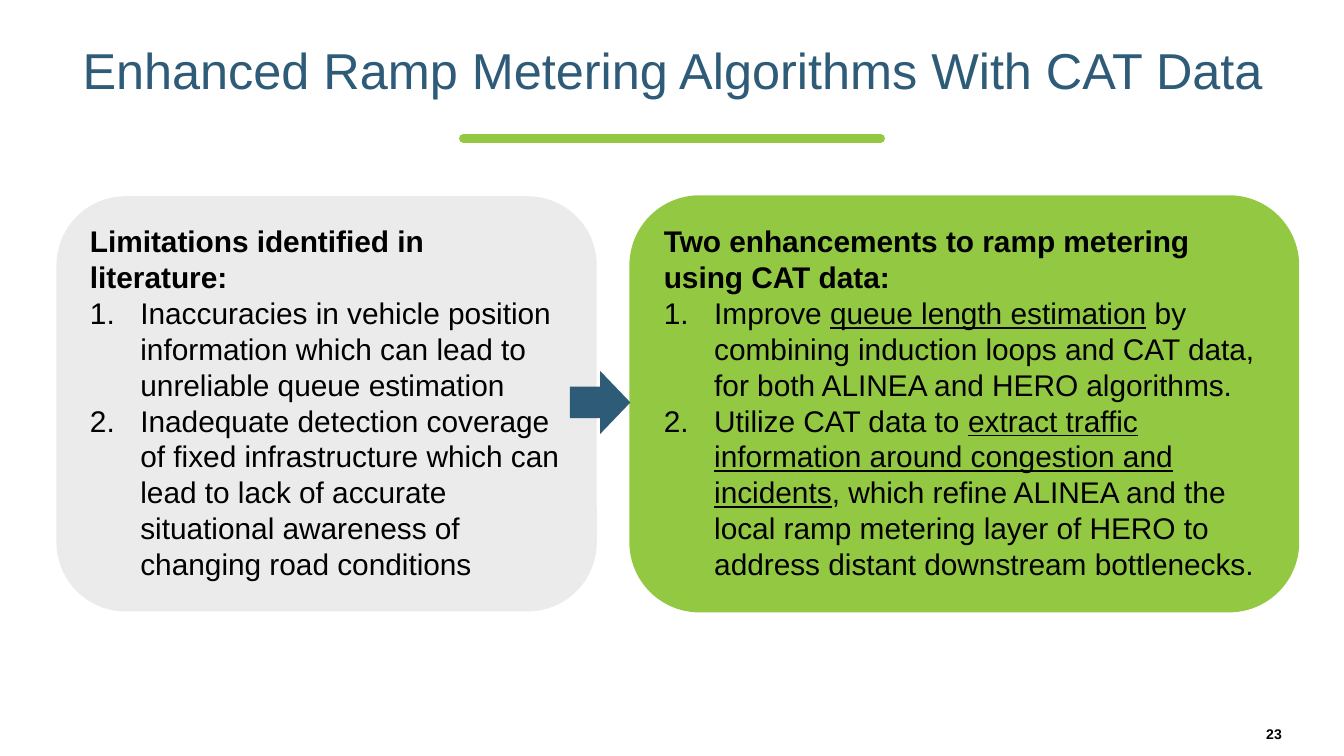
from lxml.etree import SubElement
from pptx import Presentation
from pptx.dml.color import RGBColor
from pptx.enum.shapes import MSO_CONNECTOR, MSO_SHAPE
from pptx.enum.text import MSO_ANCHOR, MSO_AUTO_SIZE, PP_ALIGN
from pptx.oxml.ns import qn
from pptx.util import Inches, Pt

BLUE, GREEN, GREY, BLACK = "2E5B78", "93C843", "EAEBEA", "000000"


def color(value):
    return RGBColor.from_string(value)


class SlideBuilder:
    """Holds the text style and the slide being built."""

    font_name = "Arial"
    list_indent = Inches(3 / 8)

    def __init__(self, page):
        self.page = page

    def span(self, para, text, ink=BLACK, **formats):
        span = para.add_run()
        span.text = text
        for name, value in {"name": self.font_name, **formats}.items():
            setattr(span.font, name, value)
        span.font.color.rgb = color(ink)

    def title(self, text, *bounds):
        box = self.page.shapes.title
        box.left, box.top, box.width, box.height = map(Inches, bounds)
        frame = box.text_frame
        frame.word_wrap = True
        frame.auto_size = MSO_AUTO_SIZE.NONE
        frame.vertical_anchor = MSO_ANCHOR.MIDDLE
        para = frame.paragraphs[0]
        para.alignment = PP_ALIGN.CENTER
        para.line_spacing = 0.9
        self.span(para, text, BLUE, size=Pt(27))

    def rule(self, start, end, y, width):
        line = self.page.shapes.add_connector(
            MSO_CONNECTOR.STRAIGHT, Inches(start), Inches(y), Inches(end), Inches(y))
        line.line.color.rgb = color(GREEN)
        line.line.width = Pt(width)
        line.line._get_or_add_ln().set("cap", "rnd")
        SubElement(line._element.spPr, qn("a:effectLst"))

    def shape(self, kind, fill, *bounds, outline=None):
        shape = self.page.shapes.add_shape(kind, *map(Inches, bounds))
        shape.shadow.inherit = False
        shape.fill.solid()
        shape.fill.fore_color.rgb = color(fill)
        if outline:
            shape.line.color.rgb = color(outline)
            shape.line.width = Pt(1)
        else:
            shape.line.fill.background()
        return shape

    def panel(self, heading, items, fill, *bounds, outline=None):
        """Rounded panel; each item is a list of (text, underlined) pairs."""
        box = self.shape(MSO_SHAPE.ROUNDED_RECTANGLE, fill, *bounds, outline=outline)
        frame = box.text_frame
        frame.word_wrap = True
        frame.vertical_anchor = MSO_ANCHOR.TOP
        para = frame.paragraphs[0]
        para.alignment = PP_ALIGN.LEFT
        self.span(para, heading, size=Pt(16), bold=True)
        for item in items:
            para = frame.add_paragraph()
            para.alignment = PP_ALIGN.LEFT
            self.number(para)
            for text, underlined in item:
                self.span(para, text, size=Pt(16), bold=False, underline=underlined)

    def number(self, para):
        props = para._p.get_or_add_pPr()
        props.set("marL", str(self.list_indent))
        props.set("indent", str(-self.list_indent))
        SubElement(props, qn("a:buFont"), typeface="+mj-lt")
        SubElement(props, qn("a:buAutoNum"), type="arabicPeriod")

    def page_number(self, text, *bounds):
        box = self.page.shapes.add_textbox(*map(Inches, bounds))
        box.text_frame.word_wrap = True
        para = box.text_frame.paragraphs[0]
        para.alignment = PP_ALIGN.CENTER
        self.span(para, text, size=Pt(7.5), bold=True)


def main():
    # Widescreen page, 16:9
    deck = Presentation()
    deck.slide_width = Inches(10)
    deck.slide_height = Inches(10 * 9 / 16)
    builder = SlideBuilder(deck.slides.add_slide(deck.slide_layouts[5]))

    # Title and rule below it
    builder.title("Enhanced Ramp Metering Algorithms With CAT Data", 0.34, 0.21, 9.33, 0.67)
    builder.rule(3.45, 6.55, 1.03, 5)

    # Limitations lead to enhancements
    top, height = 1.46, 3.09
    builder.panel(
        "Limitations identified in literature:",
        [
            [("Inaccuracies in vehicle position information which can lead to "
              "unreliable queue estimation", False)],
            [("Inadequate detection coverage of fixed infrastructure which can lead to "
              "lack of accurate situational awareness of changing road conditions", False)],
        ],
        GREY, 0.42, top, 4.02, height)
    builder.panel(
        "Two enhancements to ramp metering using CAT data:",
        [
            [("Improve ", False), ("queue length estimation", True),
             (" by combining induction loops and CAT data, for both ALINEA and "
              "HERO algorithms.", False)],
            [("Utilize CAT data to ", False),
             ("extract traffic information around congestion and incidents", True),
             (", which refine ALINEA and the local ramp metering layer of HERO to "
              "address distant downstream bottlenecks.", False)],
        ],
        GREEN, 4.69, top, 4.97, height, outline=GREEN)
    builder.shape(MSO_SHAPE.RIGHT_ARROW, BLUE, 4.24, 2.76, 0.45, 0.47)

    # Page number
    builder.page_number("23", 8.9, 5.35, 1.16, 0.23)

    deck.save("out.pptx")


if __name__ == "__main__":
    main()
